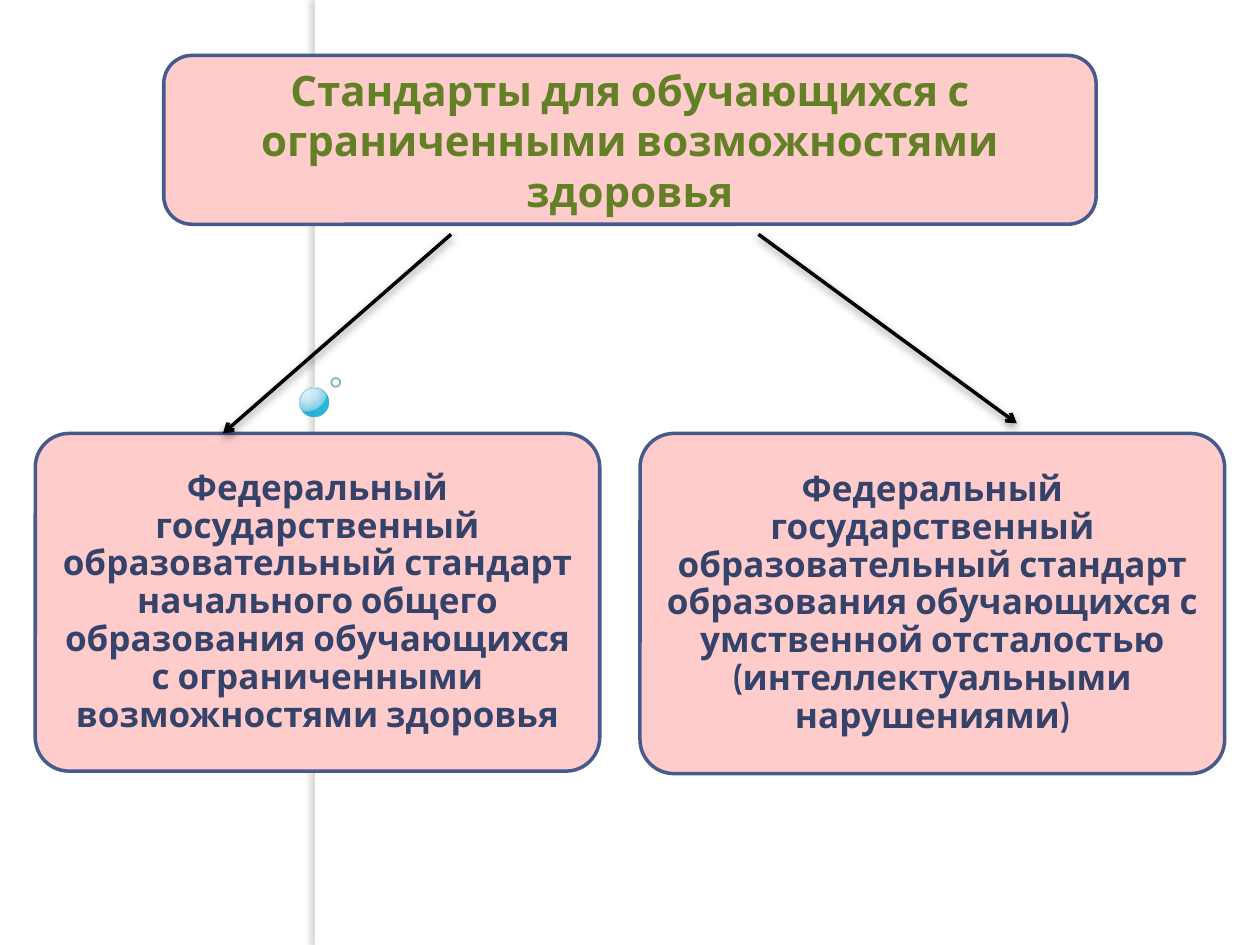
from dataclasses import dataclass

from lxml.etree import SubElement
from pptx import Presentation
from pptx.dml.color import RGBColor
from pptx.enum.shapes import MSO_CONNECTOR, MSO_SHAPE
from pptx.enum.text import MSO_ANCHOR, MSO_AUTO_SIZE, PP_ALIGN
from pptx.oxml import parse_xml
from pptx.oxml.ns import nsdecls, qn
from pptx.util import Inches, Pt


@dataclass(frozen=True)
class Theme:
    font: str = "Cabin"
    title_size: int = 24
    body_size: int = 20
    title_text: str = "638026"
    body_text: str = "35436A"
    box_fill: str = "FFCCCC"
    box_line: str = "475A8D"
    arrow: str = "000000"
    stripe: str = "FFFFFF"
    stripe_shadow: str = "736F63"
    bubble_line: str = "308EA5"
    ring_line: str = "318093"
    # Position, colour and opacity of each stop, in percent
    bubble_stops: tuple = ((0, "DAF4FF", 95), (50, "C3E3F0", 90),
                           (95, "6BC7E8", 88), (100, "00ABD5", 85))


THEME = Theme()
TITLE = "Стандарты для обучающихся с ограниченными возможностями здоровья"
STANDARDS = [
    ((0.28, 3.44, 4.48, 2.68),
     "Федеральный государственный образовательный стандарт начального общего "
     "образования обучающихся с ограниченными возможностями здоровья"),
    ((5.08, 3.44, 4.64, 2.7),
     "Федеральный государственный образовательный стандарт образования "
     "обучающихся с умственной отсталостью (интеллектуальными нарушениями)"),
]
ARROWS = [((3.58, 1.86), (1.77, 3.44)), ((6.02, 1.86), (8.07, 3.36))]


def rgb(color):
    return RGBColor.from_string(color)


def inches(values):
    return [Inches(value) for value in values]


def add_plain_shape(slide, kind, place, fill=None, line=None, width=1):
    shape = slide.shapes.add_shape(kind, *inches(place))
    if fill:
        shape.fill.solid()
        shape.fill.fore_color.rgb = rgb(fill)
    else:
        shape.fill.background()
    if line:
        shape.line.color.rgb = rgb(line)
        shape.line.width = Pt(width)
    else:
        shape.line.fill.background()
    shape.shadow.inherit = False
    return shape


def set_shadow(shape, color, opacity, blur, distance, angle):
    properties = shape._element.spPr
    effects = properties.find(qn("a:effectLst"))
    if effects is None:
        effects = SubElement(properties, qn("a:effectLst"))
    shadow = SubElement(effects, qn("a:outerShdw"), blurRad=str(Pt(blur)),
                        dist=str(Pt(distance)), dir=str(angle * 60000),
                        rotWithShape="0")
    tint = SubElement(shadow, qn("a:srgbClr"), val=color)
    SubElement(tint, qn("a:alpha"), val=str(opacity * 1000))


def set_line_opacity(shape, opacity):
    for tint in shape.line._ln.iter(qn("a:srgbClr")):
        SubElement(tint, qn("a:alpha"), val=str(opacity * 1000))


def set_radial_fill(shape, stops):
    stop_xml = "".join(
        f'<a:gs pos="{position * 1000}"><a:srgbClr val="{color}">'
        f'<a:alpha val="{opacity * 1000}"/></a:srgbClr></a:gs>'
        for position, color, opacity in stops)
    shape.fill.gradient()
    properties = shape._element.spPr
    properties.replace(properties.find(qn("a:gradFill")), parse_xml(
        f'<a:gradFill {nsdecls("a")} rotWithShape="1"><a:gsLst>{stop_xml}</a:gsLst>'
        '<a:path path="circle">'
        '<a:fillToRect l="25000" t="12000" r="75000" b="88000"/>'
        '</a:path></a:gradFill>'))


def set_text(shape, text, size, color, spacing=1.0):
    frame = shape.text_frame
    frame.text = text
    frame.word_wrap = True
    frame.auto_size = MSO_AUTO_SIZE.NONE
    frame.vertical_anchor = MSO_ANCHOR.MIDDLE
    para = frame.paragraphs[0]
    para.alignment = PP_ALIGN.CENTER
    para.line_spacing = spacing
    font = para.runs[0].font
    font.name, font.size, font.bold = THEME.font, Pt(size), True
    font.color.rgb = rgb(color)


def add_decoration(slide):
    stripe = add_plain_shape(slide, MSO_SHAPE.RECTANGLE, (2.5, 0, 0.08, 7.5),
                             THEME.stripe)
    set_shadow(stripe, THEME.stripe_shadow, 25, 3, 3, 180)
    bubble = add_plain_shape(slide, MSO_SHAPE.OVAL, (2.38, 3.08, 0.23, 0.23),
                             line=THEME.bubble_line, width=0.16)
    set_radial_fill(bubble, THEME.bubble_stops)
    ring = add_plain_shape(slide, MSO_SHAPE.OVAL, (2.63, 3, 0.07, 0.07),
                           line=THEME.ring_line)
    for circle in (bubble, ring):
        set_line_opacity(circle, 60)


def add_box(slide, place):
    return add_plain_shape(slide, MSO_SHAPE.ROUNDED_RECTANGLE, place,
                           THEME.box_fill, THEME.box_line, 2)


def add_title(slide, text):
    place = (1.3, 0.44, 7.4, 1.34)
    add_box(slide, place)
    title = slide.shapes.title
    title.left, title.top, title.width, title.height = inches(place)
    set_text(title, text, THEME.title_size, THEME.title_text)
    # Bring the title in front of its box
    slide.shapes._spTree.append(title._element)


def add_standard(slide, place, text):
    box = add_box(slide, place)
    box.adjustments[0] = 0.1
    frame = box.text_frame
    frame.margin_left = frame.margin_right = Inches(0.08)
    frame.margin_top = frame.margin_bottom = Inches(0.08)
    set_text(box, text, THEME.body_size, THEME.body_text, 0.9)


def add_arrow(slide, start, end):
    arrow = slide.shapes.add_connector(MSO_CONNECTOR.STRAIGHT,
                                       *inches(start + end))
    arrow.line.color.rgb = rgb(THEME.arrow)
    arrow.line.width = Pt(2)
    SubElement(arrow.line._ln, qn("a:tailEnd"), type="arrow")
    set_shadow(arrow, THEME.arrow, 43, 5, 2, 90)


def main():
    deck = Presentation()
    deck.slide_width, deck.slide_height = Inches(10), Inches(7.5)
    page = deck.slides.add_slide(deck.slide_layouts[5])

    # Background stripe and bubbles
    add_decoration(page)
    # Heading and the two standards below it
    add_title(page, TITLE)
    for place, text in STANDARDS:
        add_standard(page, place, text)
    # Arrows from the heading to the standards
    for start, end in ARROWS:
        add_arrow(page, start, end)

    deck.save("out.pptx")


if __name__ == "__main__":
    main()
